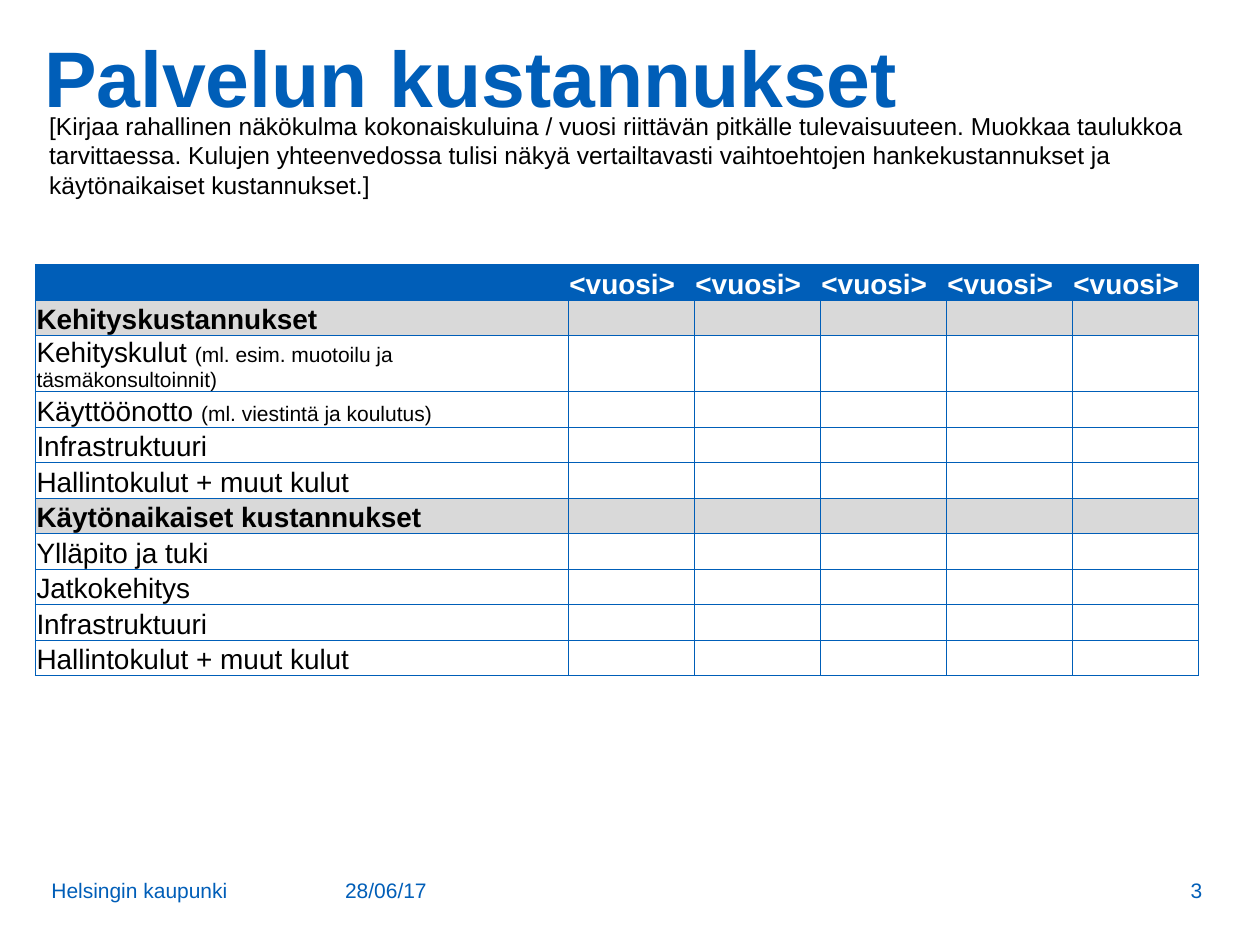
from dataclasses import dataclass

from lxml import etree
from pptx import Presentation
from pptx.dml.color import RGBColor
from pptx.enum.text import MSO_ANCHOR, MSO_AUTO_SIZE, PP_ALIGN
from pptx.oxml.ns import qn
from pptx.util import Emu, Pt

EMU_PER_PX = 9144  # 100 px to the inch
TITLE_ONLY_LAYOUT = 5
TOP, BOTTOM = MSO_ANCHOR.TOP, MSO_ANCHOR.BOTTOM
LEFT, RIGHT = PP_ALIGN.LEFT, PP_ALIGN.RIGHT


@dataclass(frozen=True)
class Theme:
    font: str = "Arial"
    blue: str = "005EB8"
    black: str = "000000"
    white: str = "FFFFFF"
    grey: str = "D9D9D9"
    title_size: float = 45
    table_size: float = 16
    body_size: float = 14
    small_size: float = 12
    border_width: float = 0.5


THEME = Theme()


@dataclass(frozen=True)
class Box:
    left: int
    top: int
    width: int
    height: int


@dataclass(frozen=True)
class Run:
    text: str
    size: float
    color: str
    bold: bool = False


@dataclass(frozen=True)
class Label:
    box: Box
    run: Run
    anchor: MSO_ANCHOR = BOTTOM
    alignment: PP_ALIGN = LEFT
    margins: tuple[int, int, int, int] = (10, 5, 10, 5)


@dataclass(frozen=True)
class CostRow:
    name: str
    note: str = ""
    heading: bool = False


TITLE = Label(
    Box(28, 25, 922, 146),
    Run("Palvelun kustannukset", THEME.title_size, THEME.blue, True),
    anchor=TOP,
    margins=(7, 9, 7, 5),
)
LABELS = [
    Label(Box(264, 682, 155, 39), Run("28/06/17", THEME.small_size, THEME.blue)),
    Label(Box(31, 670, 233, 51), Run("Helsingin kaupunki", THEME.small_size, THEME.blue)),
    Label(Box(846, 682, 118, 39), Run("3", THEME.small_size, THEME.blue), alignment=RIGHT),
    Label(
        Box(35, 84, 921, 79),
        Run(
            "[Kirjaa rahallinen näkökulma kokonaiskuluina / vuosi riittävän pitkälle "
            "tulevaisuuteen. Muokkaa taulukkoa tarvittaessa. Kulujen yhteenvedossa tulisi "
            "näkyä vertailtavasti vaihtoehtojen hankekustannukset ja käytönaikaiset "
            "kustannukset.]",
            THEME.body_size,
            THEME.black,
        ),
        anchor=TOP,
        margins=(4, 4, 4, 4),
    ),
]

TABLE_LEFT, TABLE_TOP = 28, 210
NAME_WIDTH, YEAR_WIDTH, ROW_HEIGHT = 423, 100, 25
YEARS = ["<vuosi>"] * 5
COST_ROWS = [
    CostRow("Kehityskustannukset", heading=True),
    CostRow("Kehityskulut ", "(ml. esim. muotoilu ja täsmäkonsultoinnit)"),
    CostRow("Käyttöönotto ", "(ml. viestintä ja koulutus)"),
    CostRow("Infrastruktuuri"),
    CostRow("Hallintokulut + muut kulut"),
    CostRow("Käytönaikaiset kustannukset", heading=True),
    CostRow("Ylläpito ja tuki"),
    CostRow("Jatkokehitys"),
    CostRow("Infrastruktuuri"),
    CostRow("Hallintokulut + muut kulut"),
]


def px(length: int) -> Emu:
    return Emu(length * EMU_PER_PX)


def set_attributes(target, values: dict) -> None:
    for name, value in values.items():
        setattr(target, name, value)


def margin_values(margins: tuple[int, int, int, int]) -> dict:
    sides = ("left", "top", "right", "bottom")
    return {f"margin_{side}": px(margin) for side, margin in zip(sides, margins)}


def add_run(paragraph, run: Run) -> None:
    text_run = paragraph.add_run()
    text_run.text = run.text
    set_attributes(
        text_run.font, {"name": THEME.font, "size": Pt(run.size), "bold": run.bold}
    )
    text_run.font.color.rgb = RGBColor.from_string(run.color)


def format_label(shape, label: Label) -> None:
    """Place a title or text box and give it its text."""
    box = label.box
    set_attributes(
        shape,
        {
            "left": px(box.left),
            "top": px(box.top),
            "width": px(box.width),
            "height": px(box.height),
        },
    )
    set_attributes(
        shape.text_frame,
        {
            "word_wrap": True,
            "auto_size": MSO_AUTO_SIZE.NONE,
            "vertical_anchor": label.anchor,
            **margin_values(label.margins),
        },
    )
    paragraph = shape.text_frame.paragraphs[0]
    paragraph.alignment = label.alignment
    add_run(paragraph, label.run)


def add_borders(cell) -> None:
    properties = cell._tc.get_or_add_tcPr()
    for side in ("lnL", "lnR", "lnT", "lnB"):
        line = etree.SubElement(
            properties, qn(f"a:{side}"), w=str(Pt(THEME.border_width))
        )
        fill = etree.SubElement(line, qn("a:solidFill"))
        etree.SubElement(fill, qn("a:srgbClr"), val=THEME.blue)


def format_cell(cell, runs: list[Run], fill: str | None) -> None:
    set_attributes(cell, {"vertical_anchor": BOTTOM, **margin_values((1, 1, 1, 0))})
    add_borders(cell)
    if fill:
        cell.fill.solid()
        cell.fill.fore_color.rgb = RGBColor.from_string(fill)
    else:
        cell.fill.background()
    paragraph = cell.text_frame.paragraphs[0]
    for run in runs:
        add_run(paragraph, run)
    if not runs:  # keeps an empty cell as low as a filled one
        size = str(round(THEME.table_size * 100))
        etree.SubElement(paragraph._p, qn("a:endParaRPr"), sz=size)


def name_runs(row: CostRow) -> list[Run]:
    runs = [Run(row.name, THEME.table_size, THEME.black, row.heading)]
    if row.note:
        runs.append(Run(row.note, THEME.small_size, THEME.black))
    return runs


def add_cost_table(slide) -> None:
    widths = [NAME_WIDTH] + [YEAR_WIDTH] * len(YEARS)
    row_count = len(COST_ROWS) + 1
    table = slide.shapes.add_table(
        row_count, len(widths), px(TABLE_LEFT), px(TABLE_TOP),
        px(sum(widths)), px(ROW_HEIGHT * row_count),
    ).table
    set_attributes(table, {"first_row": False, "horz_banding": False})
    for column, width in zip(table.columns, widths):
        column.width = px(width)

    year_runs = [[Run(year, THEME.table_size, THEME.white, True)] for year in YEARS]
    contents = [([[], *year_runs], THEME.blue)]
    for row in COST_ROWS:
        cells = [name_runs(row)] + [[] for _ in YEARS]
        contents.append((cells, THEME.grey if row.heading else None))
    for table_row, (cells, fill) in zip(table.rows, contents):
        table_row.height = px(ROW_HEIGHT)
        for cell, runs in zip(table_row.cells, cells):
            format_cell(cell, runs, fill)


def main() -> None:
    presentation = Presentation()
    set_attributes(presentation, {"slide_width": px(1000), "slide_height": px(750)})
    slide = presentation.slides.add_slide(presentation.slide_layouts[TITLE_ONLY_LAYOUT])
    title = slide.shapes.title
    format_label(title, TITLE)
    title.text_frame.paragraphs[0].line_spacing = 0.85
    add_cost_table(slide)
    for label in LABELS:
        format_label(slide.shapes.add_textbox(0, 0, 0, 0), label)
    presentation.save("out.pptx")


if __name__ == "__main__":
    main()
